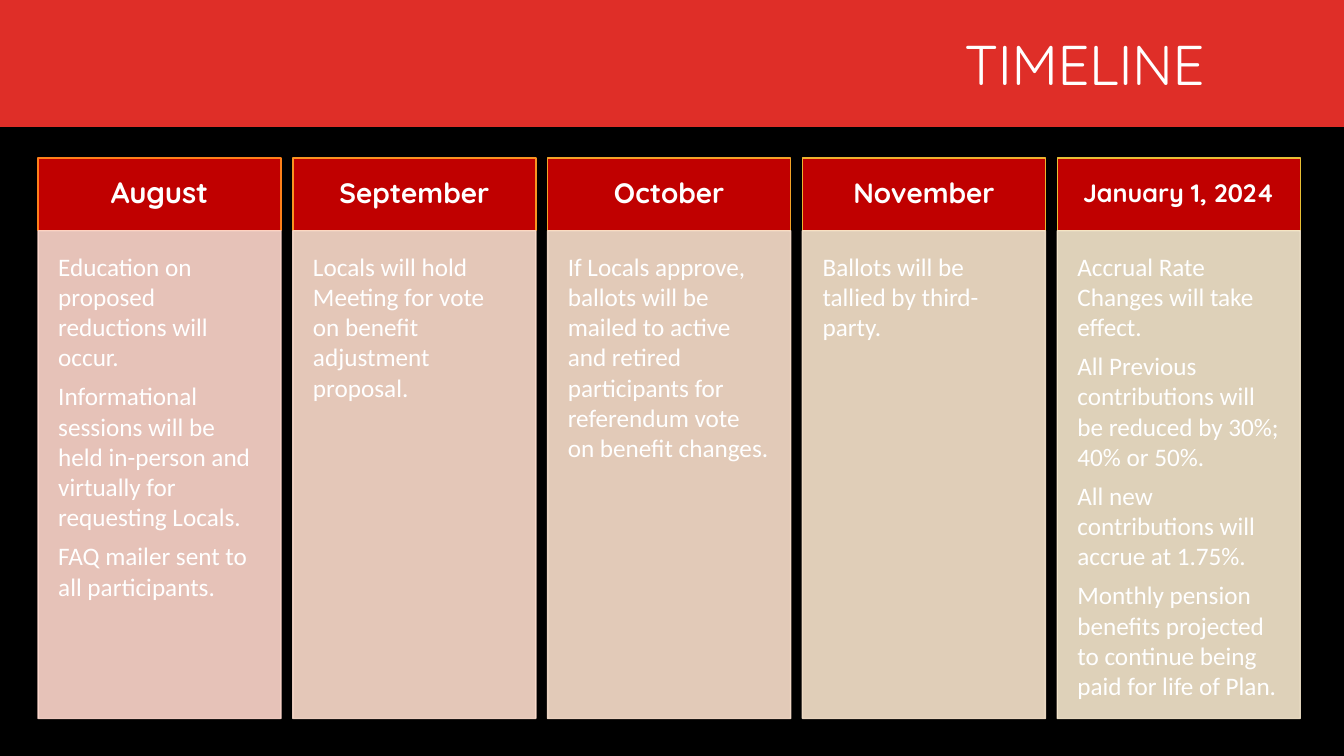
from lxml import etree
from pptx import Presentation
from pptx.dml.color import RGBColor
from pptx.enum.shapes import MSO_SHAPE
from pptx.enum.text import MSO_ANCHOR, PP_ALIGN
from pptx.oxml.ns import qn
from pptx.util import Pt

RECT = MSO_SHAPE.RECTANGLE
TOP, MIDDLE = MSO_ANCHOR.TOP, MSO_ANCHOR.MIDDLE
LEFT, CENTER, RIGHT = PP_ALIGN.LEFT, PP_ALIGN.CENTER, PP_ALIGN.RIGHT

COLORS = {"background": "000000", "banner": "DF2E28", "header": "C00000", "text": "FFFFFF"}
HEAD_FONT, BODY_FONT = "Quicksand", "Calibri"
SLIDE_W, SLIDE_H = 960, 540
COL_LEFT, COL_STEP, COL_W = 27.2, 182, 173.6
HEAD_TOP, HEAD_H = 112.8, 52
BODY_TOP, BODY_H = HEAD_TOP + HEAD_H, 348.4

# Month, header size, header line, body colour, body paragraphs
MONTHS = [
    ("August", 21, "FE801A", "FFD8CD", [
        "Education on proposed reductions will occur.",
        "Informational sessions will be held in-person and virtually for requesting Locals.",
        "FAQ mailer sent to all participants."]),
    ("September", 20, "F99321", "FDDDCD", [
        "Locals will hold Meeting for vote on benefit adjustment proposal."]),
    ("October", 20, "F3A328", "FBE1CD", [
        "If Locals approve, ballots will be mailed to active and retired participants "
        "for referendum vote on benefit changes."]),
    ("November", 20, "EEB22E", "F9E5CD", [
        "Ballots will be tallied by third-party."]),
    ("January 1, 2024", 18, "E9BF35", "F7E8CE", [
        "Accrual Rate Changes will take effect.",
        "All Previous contributions will be reduced by 30%; 40% or 50%.",
        "All new contributions will accrue at 1.75%.",
        "Monthly pension benefits projected to continue being paid for life of Plan."]),
]


def rgb(color):
    return RGBColor.from_string(COLORS.get(color, color))


class TimelineSlide:
    def __init__(self, prs):
        self.s = prs.slides.add_slide(prs.slide_layouts[6])
        fill = self.s.background.fill
        fill.solid()
        fill.fore_color.rgb = rgb("background")

    def rect(self, x, y, w, h, color, line=None, opacity=100):
        sp = self.s.shapes.add_shape(RECT, Pt(x), Pt(y), Pt(w), Pt(h))
        sp.shadow.inherit = False
        sp.fill.solid()
        sp.fill.fore_color.rgb = rgb(color)
        if line:
            sp.line.color.rgb = rgb(line)
            sp.line.width = Pt(1)
        else:
            sp.line.fill.background()
        if opacity < 100:
            for clr in sp._element.spPr.iter(qn("a:srgbClr")):
                etree.SubElement(clr, qn("a:alpha")).set("val", str(opacity * 1000))
        return sp

    def text(self, sp, lines, font, size, align, anchor, inset, bold=False, spacing=1.0):
        tf = sp.text_frame
        tf.word_wrap = True
        tf.vertical_anchor = anchor
        tf.margin_left = tf.margin_right = tf.margin_top = tf.margin_bottom = Pt(inset)
        for i, line in enumerate(lines):
            p = tf.paragraphs[0] if i == 0 else tf.add_paragraph()
            p.add_run().text = line
            p.alignment = align
            p.line_spacing = spacing
            p.space_before = Pt(0)
            p.space_after = Pt(round(size * 0.35, 2))
            p.font.name = font
            p.font.size = Pt(size)
            p.font.bold = bold
            p.font.color.rgb = rgb("text")

    def title(self, title, x, y, w, h):
        sp = self.s.shapes.add_textbox(Pt(x), Pt(y), Pt(w), Pt(h))
        self.text(sp, [title], HEAD_FONT, 40, RIGHT, MIDDLE, 7.2)
        r = sp.text_frame.paragraphs[0].runs[0]
        r._r.get_or_add_rPr().set("spc", "-20")

    def month(self, x, name, size, line, color, lines):
        header = self.rect(x, HEAD_TOP, COL_W, HEAD_H, "header", line)
        self.text(header, [name], HEAD_FONT, size, CENTER, MIDDLE, 13.7, True, 0.9)
        body = self.rect(x, BODY_TOP, COL_W, BODY_H, color, color, 90)
        self.text(body, lines, BODY_FONT, 18, LEFT, TOP, 14.4)


def main():
    prs = Presentation()
    prs.slide_width, prs.slide_height = Pt(SLIDE_W), Pt(SLIDE_H)
    slide = TimelineSlide(prs)

    # Title banner
    slide.rect(0, 0, SLIDE_W, 90.7, "banner")
    slide.title("TIMELINE", 78.5, 15.1, 789, 59.8)

    # Month columns
    for i, month in enumerate(MONTHS):
        slide.month(COL_LEFT + i * COL_STEP, *month)

    prs.save("out.pptx")


if __name__ == "__main__":
    main()
